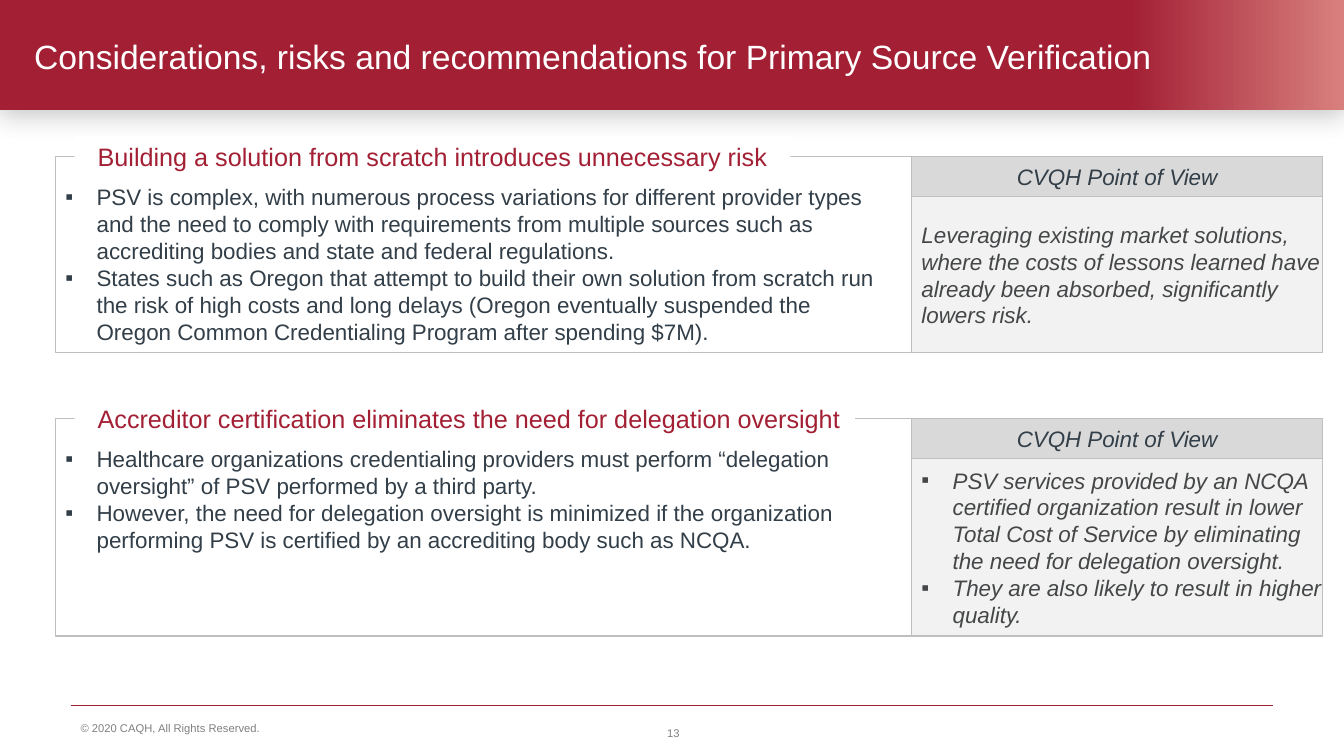
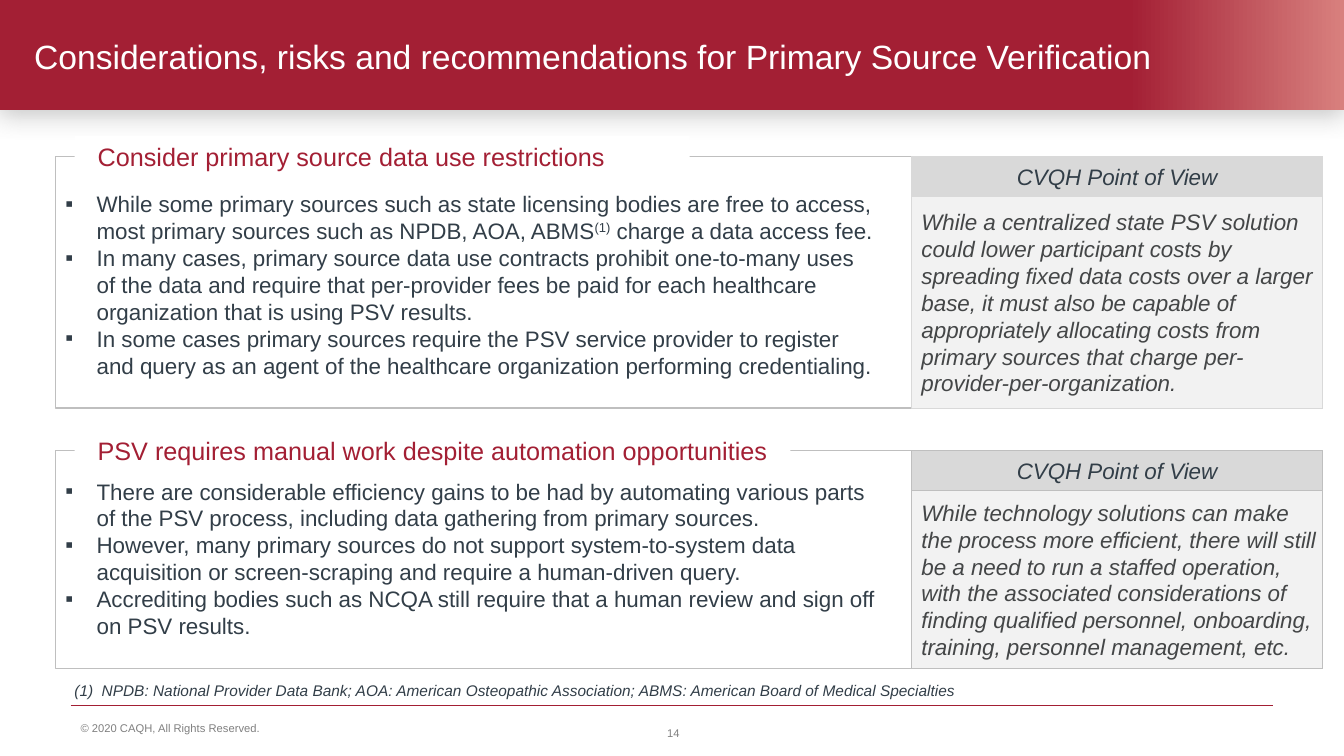
from lxml import etree
from pptx import Presentation
from pptx.dml.color import RGBColor
from pptx.enum import shapes, text
from pptx.oxml import ns
from pptx.util import Inches, Pt

# Shared look
CRIMSON = RGBColor(0xA3, 0x1F, 0x34)
ROSE = RGBColor(0xD8, 0x80, 0x7E)
SLATE = RGBColor(0x32, 0x3E, 0x48)
CHARCOAL = RGBColor(0x44, 0x46, 0x47)
GRAY = RGBColor(0x80, 0x80, 0x80)
BORDER = RGBColor(0xBF, 0xBF, 0xBF)
HEADER_GRAY = RGBColor(0xD9, 0xD9, 0xD9)
PALE = RGBColor(0xF2, 0xF2, 0xF2)
WHITE = RGBColor(0xFF, 0xFF, 0xFF)
FONT = "Arial"
LEFT, CENTER = text.PP_ALIGN.LEFT, text.PP_ALIGN.CENTER
TOP, MIDDLE, BOTTOM = (text.MSO_ANCHOR.TOP, text.MSO_ANCHOR.MIDDLE,
                       text.MSO_ANCHOR.BOTTOM)

SLIDE_W, SLIDE_H = 13.33, 7.5
PANEL_LEFT, PANEL_W = 0.55, 12.57
VIEW_W, HEADER_H = 4.08, 0.4
BULLET_INDENT = 0.31

TITLE = "Considerations, risks and recommendations for Primary Source Verification"
COPYRIGHT = "© 2020 CAQH, All Rights Reserved."
VIEW_HEADER = "CVQH Point of View"
FOOTNOTE = ("(1)\tNPDB: National Provider Data Bank; AOA: American Osteopathic "
            "Association; ABMS: American Board of Medical Specialties")

# Text between two ^ marks is raised
PAGES = [
    dict(number=13, panels=[
        dict(top=1.55, height=1.95, heading_w=7.1,
             heading="Building a solution from scratch introduces unnecessary risk",
             points=[
                 "PSV is complex, with numerous process variations for different "
                 "provider types and the need to comply with requirements from "
                 "multiple sources such as accrediting bodies and state and federal "
                 "regulations.",
                 "States such as Oregon that attempt to build their own solution from "
                 "scratch run the risk of high costs and long delays (Oregon "
                 "eventually suspended the Oregon Common Credentialing Program after "
                 "spending $7M)."],
             view=["Leveraging existing market solutions, where the costs of lessons "
                   "learned have already been absorbed, significantly lowers risk."]),
        dict(top=4.15, height=2.16, heading_w=7.74,
             heading="Accreditor certification eliminates the need for delegation "
                     "oversight",
             points=[
                 "Healthcare organizations credentialing providers must perform "
                 "“delegation oversight” of PSV performed by a third party.",
                 "However, the need for delegation oversight is minimized if the "
                 "organization performing PSV is certified by an accrediting body "
                 "such as NCQA."],
             view=["PSV services provided by an NCQA certified organization result in "
                   "lower Total Cost of Service by eliminating the need for "
                   "delegation oversight.",
                   "They are also likely to result in higher quality."]),
    ]),
    dict(number=14, footnote=FOOTNOTE, panels=[
        dict(top=1.55, height=2.5, heading_w=6.1, points_gap=0.29,
             view_border=HEADER_GRAY,
             heading="Consider primary source data use restrictions",
             points=[
                 "While some primary sources such as state licensing bodies are free "
                 "to access, most primary sources such as NPDB, AOA, ABMS^(1)^ charge "
                 "a data access fee.",
                 "In many cases, primary source data use contracts prohibit "
                 "one-to-many uses of the data and require that per-provider fees be "
                 "paid for each healthcare organization that is using PSV results.",
                 "In some cases primary sources require the PSV service provider to "
                 "register and query as an agent of the healthcare organization "
                 "performing credentialing."],
             view=["While a centralized state PSV solution could lower participant "
                   "costs by spreading fixed data costs over a larger base, it must "
                   "also be capable of appropriately allocating costs from primary "
                   "sources that charge per-provider-per-organization."]),
        dict(top=4.47, height=2.16, heading_w=7.1,
             heading="PSV requires manual work despite automation opportunities",
             points=[
                 "There are considerable efficiency gains to be had by automating "
                 "various parts of the PSV process, including data gathering from "
                 "primary sources.",
                 "However, many primary sources do not support system-to-system data "
                 "acquisition or screen-scraping and require a human-driven query.",
                 "Accrediting bodies such as NCQA still require that a human review "
                 "and sign off on PSV results."],
             view=["While technology solutions can make the process more efficient, "
                   "there will still be a need to run a staffed operation, with the "
                   "associated considerations of finding qualified personnel, "
                   "onboarding, training, personnel management, etc."]),
    ]),
]


def add_box(slide, left, top, width, height, fill=None, border=None, weight=0.75):
    """A plain rectangle without shadow."""
    box = slide.shapes.add_shape(shapes.MSO_SHAPE.RECTANGLE, Inches(left),
                                 Inches(top), Inches(width), Inches(height))
    box.shadow.inherit = False
    if fill is not None:
        box.fill.solid()
        box.fill.fore_color.rgb = fill
    if border is None:
        box.line.fill.background()
    else:
        box.line.color.rgb = border
        box.line.width = Pt(weight)
    return box


def add_textbox(slide, left, top, width, height):
    return slide.shapes.add_textbox(Inches(left), Inches(top), Inches(width),
                                    Inches(height))


def set_indent(paragraph, margin, first_line=0.0):
    props = paragraph._p.get_or_add_pPr()
    props.set("marL", str(Inches(margin)))
    props.set("indent", str(Inches(first_line)))
    return props


def write(shape, lines, size, color, italic=False, align=LEFT, anchor=TOP,
          bullets=False):
    """Fill a shape with paragraphs, optionally bulleted."""
    frame = shape.text_frame
    frame.word_wrap = True
    frame.vertical_anchor = anchor
    for index, line in enumerate(lines):
        paragraph = frame.add_paragraph() if index else frame.paragraphs[0]
        paragraph.alignment = align
        if bullets:
            props = set_indent(paragraph, BULLET_INDENT, -BULLET_INDENT)
            etree.SubElement(props, ns.qn("a:buFont"), typeface=FONT)
            etree.SubElement(props, ns.qn("a:buChar"), char="▪")
        for part, words in enumerate(line.split("^")):
            run = paragraph.add_run()
            run.text = words
            run.font.name = FONT
            run.font.size = Pt(size)
            run.font.color.rgb = color
            run.font.italic = italic
            if part % 2:
                run._r.get_or_add_rPr().set("baseline", "30000")
    return frame


def add_title_band(slide):
    band = add_box(slide, 0, 0, SLIDE_W, 1.09)
    band.fill.gradient()
    band.fill.gradient_angle = 0
    for stop, position, color in zip(band.fill.gradient_stops, (0.84, 1), (CRIMSON, ROSE)):
        stop.position = position
        stop.color.rgb = color
    # Soft shadow under the band
    effects = band._element.spPr.find(ns.qn("a:effectLst"))
    shadow = etree.SubElement(effects, ns.qn("a:outerShdw"), blurRad=str(Pt(18)),
                              dist=str(Pt(3)), dir=str(102 * 60000), rotWithShape="0")
    tint = etree.SubElement(shadow, ns.qn("a:srgbClr"), val=str(GRAY))
    etree.SubElement(tint, ns.qn("a:alpha"), val="43000")

    title = add_textbox(slide, 0.24, 0.15, 12.87, 0.81)
    write(title, [TITLE], 24, WHITE, anchor=MIDDLE)


def add_footer(slide, number):
    rule = slide.shapes.add_connector(shapes.MSO_CONNECTOR.STRAIGHT, Inches(0.7),
                                      Inches(7), Inches(12.63), Inches(7))
    rule.line.color.rgb = CRIMSON
    rule.line.width = Pt(0.75)
    etree.SubElement(rule._element.spPr, ns.qn("a:effectLst"))
    write(add_textbox(slide, 0.7, 7.03, 4.92, 0.31), [COPYRIGHT], 8, GRAY,
          anchor=BOTTOM)
    write(add_textbox(slide, 5.18, 7.07, 3, 0.4), [str(number)], 8, GRAY,
          align=CENTER, anchor=MIDDLE)


def add_view(slide, left, top, width, height, lines, border):
    """Point of view: a gray header above a pale body."""
    body = add_box(slide, left, top + HEADER_H, width, height - HEADER_H, PALE, border)
    body.text_frame.margin_right = Inches(0.01)
    write(body, lines, 16, CHARCOAL, italic=True, anchor=MIDDLE,
          bullets=len(lines) > 1)
    header = add_box(slide, left, top, width, HEADER_H, HEADER_GRAY, border)
    write(header, [VIEW_HEADER], 16, SLATE, italic=True, align=CENTER, anchor=MIDDLE)


def add_panel(slide, top, height, heading, heading_w, points, view,
              points_gap=0.22, view_border=BORDER):
    """Framed points with a heading on the frame and a view at the right."""
    add_box(slide, PANEL_LEFT, top, PANEL_W, height, WHITE, BORDER, 1)
    label = add_box(slide, PANEL_LEFT + 0.19, top - 0.2, heading_w, 0.4, WHITE)
    frame = write(label, [heading], 18, CRIMSON)
    set_indent(frame.paragraphs[0], 0.13)
    add_view(slide, PANEL_LEFT + PANEL_W - VIEW_W, top, VIEW_W, height, view,
             view_border)
    points_box = add_textbox(slide, PANEL_LEFT, top + points_gap, 8.25,
                             height - points_gap)
    write(points_box, points, 16, SLATE, bullets=True)


def add_footnote(slide, note):
    frame = write(add_textbox(slide, 0.64, 6.71, 9.2, 0.29), [note], 11, SLATE,
                  italic=True)
    set_indent(frame.paragraphs[0], 0.27, -0.27)


def add_page(prs, number, panels, footnote=None):
    slide = prs.slides.add_slide(prs.slide_layouts[6])
    add_title_band(slide)
    add_footer(slide, number)
    for panel in panels:
        add_panel(slide, **panel)
    if footnote:
        add_footnote(slide, footnote)


def main():
    prs = Presentation()
    prs.slide_width, prs.slide_height = Inches(SLIDE_W), Inches(SLIDE_H)
    for page in PAGES:
        add_page(prs, **page)
    prs.save("out.pptx")


if __name__ == "__main__":
    main()
